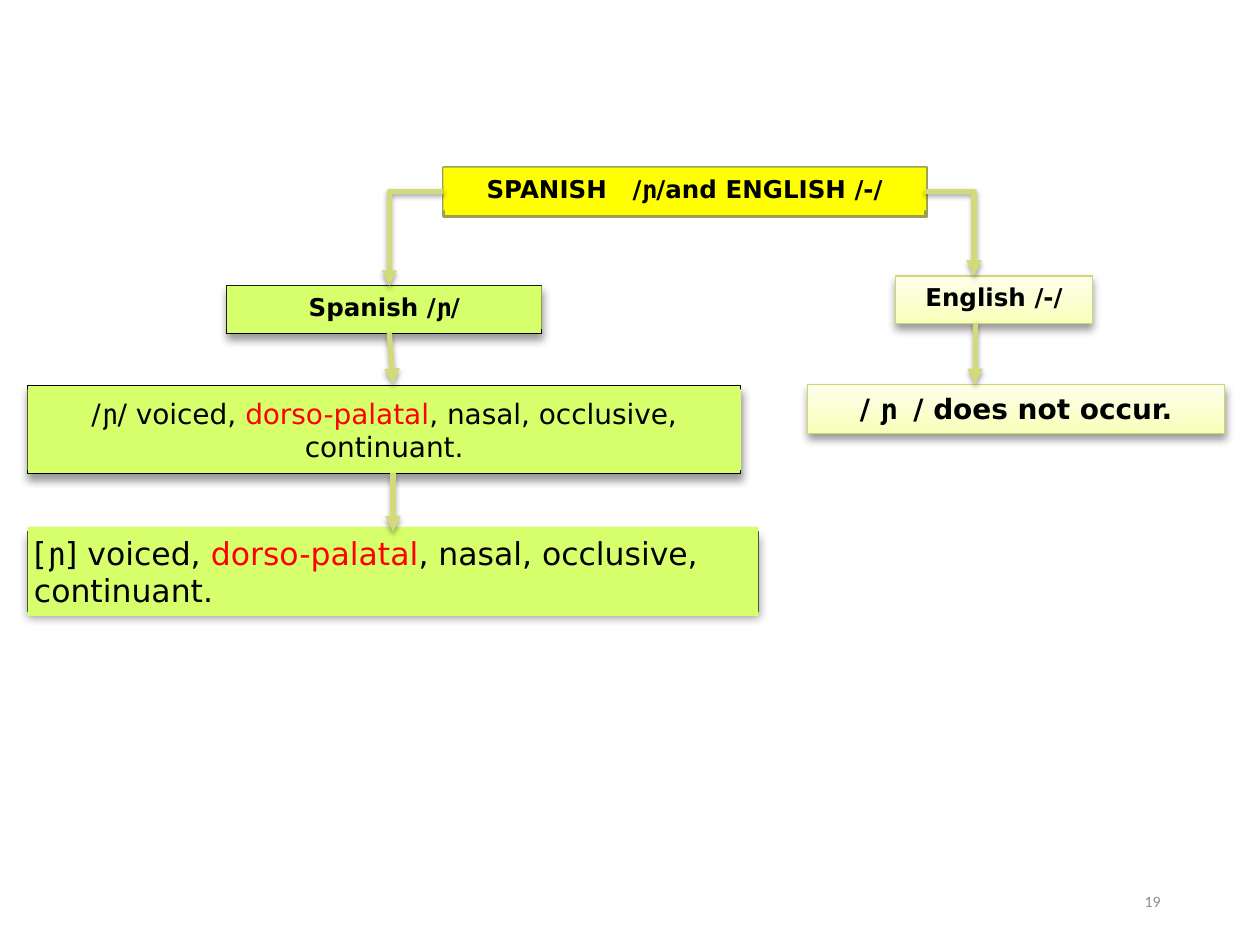
from collections import namedtuple
from lxml.etree import SubElement
from pptx import Presentation
from pptx.dml.color import RGBColor
from pptx.enum.shapes import MSO_CONNECTOR, MSO_SHAPE
from pptx.enum.text import MSO_ANCHOR, PP_ALIGN
from pptx.oxml.ns import qn
from pptx.util import Inches, Pt

COLUMNS, ROWS = 100, 75
CELL = Inches(0.1)
COLORS = {
    "yellow": "FFFF00", "olive": "999F59", "lime": "D7FF6B", "black": "000000",
    "red": "FF0000", "arrow": "D2DA7A", "cream line": "CFD775", "gray": "8C8C8C",
}
CREAM_STOPS = ((0, "F8FFB8"), (35, "FAFFCC"), (100, "FDFFEB"))
PANEL_SHADOW = {"alpha": 40, "blur": 5, "distance": 3}
ARROW_SHADOW = {"alpha": 35, "blur": 3, "distance": 1.8}
SANS, MONO = "DejaVu Sans", "DejaVu Sans Mono"
YELLOW = {"fill": "yellow", "line": "olive", "width": 2, "shadow": None}
LIME = {"fill": "lime", "line": "black", "width": 0.75, "shadow": PANEL_SHADOW}
CREAM = {"fill": None, "line": "cream line", "width": 0.75, "shadow": PANEL_SHADOW}
HEADING = {"size": 14, "bold": True}
TOP, MIDDLE = MSO_ANCHOR.TOP, MSO_ANCHOR.MIDDLE

Box = namedtuple("Box", "left top width height")


def color(name):
    return RGBColor.from_string(COLORS[name])


def cells(*values):
    return [round(value * CELL) for value in values]


def within(region, left, top, width, height):
    return Box(region.left + left, region.top + top, width, height)


def add_child(parent, tag, **attributes):
    child = SubElement(parent, qn(tag))
    for name, value in attributes.items():
        child.set(name, str(value))
    return child


def set_shadow(shape, shadow):
    properties = shape._element.spPr
    for old in properties.findall(qn("a:effectLst")):
        properties.remove(old)
    effects = add_child(properties, "a:effectLst")
    if shadow:
        outer = add_child(effects, "a:outerShdw", blurRad=Pt(shadow["blur"]),
                          dist=Pt(shadow["distance"]), dir=90 * 60000, rotWithShape=0)
        tint = add_child(outer, "a:srgbClr", val=COLORS["black"])
        add_child(tint, "a:alpha", val=shadow["alpha"] * 1000)


def set_cream_gradient(shape):
    shape.fill.gradient()
    shape.fill.gradient_angle = 90
    stops = shape._element.spPr.find(qn("a:gradFill")).find(qn("a:gsLst"))
    for old in list(stops):
        stops.remove(old)
    for position, value in CREAM_STOPS:
        stop = add_child(stops, "a:gs", pos=position * 1000)
        add_child(stop, "a:srgbClr", val=value)


def write(frame, runs, align, anchor, inset, text_format):
    frame.word_wrap = True
    frame.vertical_anchor = anchor
    for side in ("left", "top", "right", "bottom"):
        setattr(frame, f"margin_{side}", inset)
    paragraph = frame.paragraphs[0]
    paragraph.alignment = align
    size = text_format["size"]
    for text, font_name, color_name in runs:
        run = paragraph.add_run()
        run.text = text
        values = {"name": font_name, "size": Pt(size), "bold": text_format.get("bold", False)}
        for name, value in values.items():
            setattr(run.font, name, value)
        run.font.color.rgb = color(color_name)
        if text == " ":
            run._r.get_or_add_rPr().set("spc", str(size * 70))


def add_panel(slide, box, style, runs, text_format, label=None,
              align=PP_ALIGN.CENTER, anchor=TOP):
    frame = slide.shapes.add_shape(MSO_SHAPE.RECTANGLE, *cells(*box))
    frame.line.color.rgb = color(style["line"])
    frame.line.width = Pt(style["width"])
    text_box = slide.shapes.add_textbox(*cells(*(label or box._replace(height=3.4))))
    if style["fill"]:
        for shape in (frame, text_box):
            shape.fill.solid()
            shape.fill.fore_color.rgb = color(style["fill"])
    else:
        set_cream_gradient(frame)
    set_shadow(frame, style["shadow"])
    write(text_box.text_frame, runs, align, anchor, Inches(0.05), text_format)
    return frame


def style_arrow(shape):
    shape.line.color.rgb = color("arrow")
    shape.line.width = Pt(3)
    add_child(shape.line._get_or_add_ln(), "a:tailEnd", type="triangle")
    set_shadow(shape, ARROW_SHADOW)


def add_elbow(slide, region, start, corner, drop):
    points = [(start, 0), (corner, 0), (corner, drop)]
    places = [cells(region.left + x, region.top + y) for x, y in points]
    builder = slide.shapes.build_freeform(*places[0])
    builder.add_line_segments(places[1:], close=False)
    elbow = builder.convert_to_shape()
    elbow.fill.background()
    style_arrow(elbow)


def add_arrow(slide, region, start, end, target=None):
    (x1, y1), (x2, y2) = start, end
    places = cells(region.left + x1, region.top + y1, region.left + x2, region.top + y2)
    arrow = slide.shapes.add_connector(MSO_CONNECTOR.STRAIGHT, *places)
    if target is not None:
        arrow.end_connect(target, 0)
    style_arrow(arrow)


def features(opening, closing, ending):
    return [(opening, SANS, "black"), ("ɲ", MONO, "black"),
            (closing + " voiced, ", SANS, "black"), ("dorso-palatal", SANS, "red"),
            (ending, SANS, "black")]


def add_header(slide, region):
    runs = [("SPANISH", SANS, "black"), (" ", SANS, "black"), ("/", SANS, "black"),
            ("ɲ", MONO, "black"), ("/and ENGLISH /-/", SANS, "black")]
    add_panel(slide, region, YELLOW, runs, HEADING)


def add_spanish_branch(slide, region):
    title = [("Spanish /", SANS, "black"), ("ɲ", MONO, "black"), ("/", SANS, "black")]
    add_panel(slide, within(region, 15.8, 7.5, 25, 3.8), LIME, title, HEADING)
    add_panel(slide, within(region, 0, 15.4, 56.6, 7), LIME,
              features("/", "/", ", nasal, occlusive, continuant."), {"size": 16},
              within(region, 0, 15.7, 56.6, 6.4), anchor=MIDDLE)
    allophone = add_panel(slide, within(region, 0, 27, 58, 6.3), LIME,
                          features("[", "]", ", nasal, occlusive, continuant."), {"size": 18},
                          within(region, 0, 26.6, 58, 7.1), PP_ALIGN.LEFT, MIDDLE)
    add_elbow(slide, region, 33, 28.7, 7.5)
    add_arrow(slide, region, (28.7, 11.2), (29, 15.3))
    add_arrow(slide, region, (29, 22.3), (29, 27), allophone)


def add_english_branch(slide, region):
    add_panel(slide, within(region, 7, 6.7, 15.6, 3.8), CREAM,
              [("English /-/", SANS, "black")], HEADING)
    absence = [("/ ", SANS, "black"), ("ɲ ", MONO, "black"),
               ("/ does not occur.", SANS, "black")]
    add_panel(slide, within(region, 0, 15.3, 33.1, 3.9), CREAM, absence,
              {"size": 16, "bold": True}, within(region, 0, 14, 33.1, 6.4), anchor=MIDDLE)
    add_elbow(slide, region, 9.3, 13.2, 6.7)
    add_arrow(slide, region, (13.3, 10.4), (13.3, 15.3))


def add_slide_number(slide, region):
    text_box = slide.shapes.add_textbox(*cells(*region))
    write(text_box.text_frame, [("19", "Calibri", "gray")], PP_ALIGN.RIGHT, MIDDLE,
          Inches(0.1), {"size": 9})


def main():
    presentation = Presentation()
    presentation.slide_width, presentation.slide_height = cells(COLUMNS, ROWS)
    slide = presentation.slides.add_slide(presentation.slide_layouts[6])
    add_header(slide, Box(35.2, 13.3, 38.3, 3.9))
    add_spanish_branch(slide, Box(2.2, 15.2, 58, 33.7))
    add_english_branch(slide, Box(64.1, 15.2, 33.1, 19.2))
    add_slide_number(slide, Box(70.6, 69.5, 22.5, 4))
    presentation.save("out.pptx")


if __name__ == "__main__":
    main()
